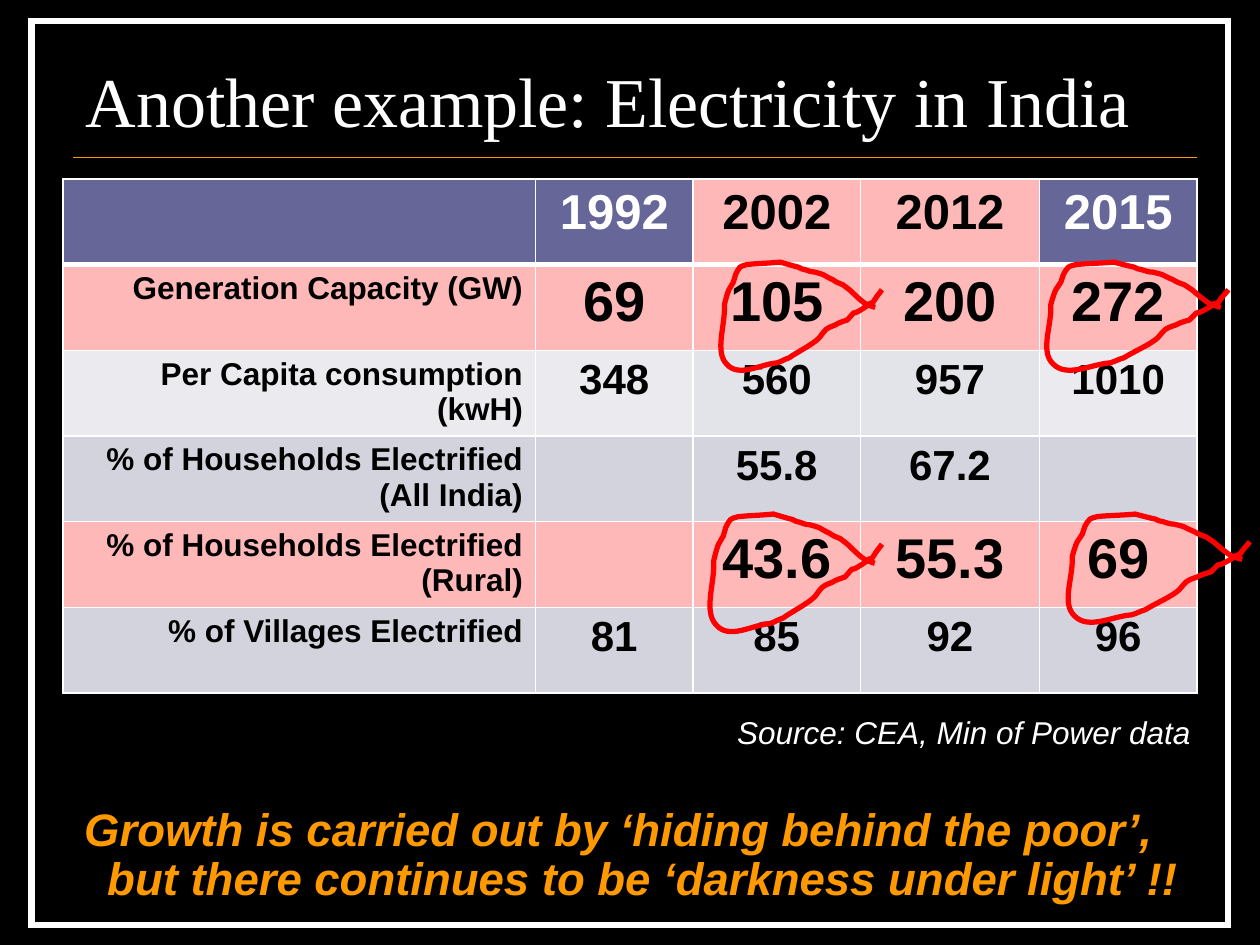
import pptx
import pptx.util
import pptx.dml.color
import pptx.enum.shapes
import pptx.enum.text
import pptx.oxml
import pptx.oxml.ns
from pptx.util import Inches

ALIGN = pptx.enum.text.PP_ALIGN
ANCHOR = pptx.enum.text.MSO_ANCHOR
NS = pptx.oxml.ns.nsdecls("a")

# Content
TITLE = "Another example: Electricity in India"
SOURCE = "Source: CEA, Min of Power data"
CONCLUSION = ("Growth is carried out by ‘hiding behind the poor’, "
              "but there continues to be ‘darkness under light’ !!")

WHITE, BLACK, ORANGE, RED = "FFFFFF", "000000", "FF9900", "FF0000"
PINK, SLATE = "FFB8B8", "666699"
LIGHT, LIGHT_MID = "EAEAEF", "E3E3EA"
DARK, DARK_MID = "D3D3DE", "D4D4DF"

# Each row: texts, value size, fill of outer columns, fill of 2002 and 2012
ROWS = [
    (["", "1992", "2002", "2012", "2015"], 28, SLATE, PINK),
    (["Generation Capacity (GW)", "69", "105", "200", "272"], 32, PINK, PINK),
    (["Per Capita consumption (kwH)", "348", "560", "957", "1010"],
     24, LIGHT, LIGHT_MID),
    (["% of Households Electrified (All India)", "", "55.8", "67.2", ""],
     24, DARK, DARK_MID),
    (["% of Households Electrified (Rural)", "", "43.6", "55.3", "69"],
     32, PINK, PINK),
    (["% of Villages Electrified", "81", "85", "92", "96"], 24, DARK, DARK_MID),
]
COLUMN_WIDTHS = [3.75, 1.25, 1.33, 1.42, 1.25]
ROW_HEIGHT = 0.68
MIDDLE_COLUMNS = (2, 3)

# Hand-drawn loop: start, then cubic curves (two controls and an end),
# in hundredths of an inch within a box of LOOP_SIZE
LOOP_SIZE = (150, 92)
LOOP_START = (144, 36)
LOOP_CURVES = [
    (142, 35, 139, 35, 137, 34), (131, 31, 126, 26, 121, 22),
    (119, 21, 117, 19, 115, 18), (112, 17, 109, 16, 106, 14),
    (94, 9, 102, 11, 90, 8), (87, 8, 84, 7, 81, 6),
    (79, 6, 77, 5, 75, 4), (70, 3, 59, 0, 59, 0),
    (49, 1, 39, 1, 29, 2), (26, 3, 24, 3, 23, 4),
    (21, 6, 20, 8, 19, 10), (18, 12, 18, 14, 17, 16),
    (16, 18, 14, 20, 13, 22), (11, 26, 9, 34, 9, 34),
    (10, 50, 0, 71, 11, 81), (22, 92, 41, 81, 56, 80),
    (60, 79, 63, 77, 67, 76), (73, 72, 89, 65, 94, 60),
    (100, 53, 99, 53, 108, 50), (111, 48, 119, 46, 119, 46),
    (130, 35, 120, 44, 131, 38), (146, 30, 128, 37, 142, 32),
    (147, 25, 145, 28, 150, 22),
]
# Left, top, width, height of each loop
LOOPS = [(8.25, 2.08, 1.5, 0.92), (8.42, 4.08, 1.5, 0.92),
         (5.58, 4.08, 1.42, 1), (5.67, 2.08, 1.33, 0.92)]


def rgb(value):
    return pptx.dml.color.RGBColor.from_string(value)


def write(frame, text, size, color, font="Arial", bold=False, italic=False,
          align=ALIGN.CENTER, spacing=0.8, before=0.2):
    paragraph = frame.paragraphs[0]
    paragraph.alignment = align
    paragraph.line_spacing = spacing
    paragraph.space_before = pptx.util.Pt(size * before)
    run = paragraph.add_run()
    run.text = text
    run.font.name = font
    run.font.size = pptx.util.Pt(size)
    run.font.bold = bold
    run.font.italic = italic
    run.font.color.rgb = rgb(color)
    return paragraph


def stroke(line, color, width):
    line.color.rgb = rgb(color)
    line.width = pptx.util.Pt(width)


def cell_borders(cell, **widths):
    properties = cell._tc.get_or_add_tcPr()
    for side, width in widths.items():
        properties.append(pptx.oxml.parse_xml(
            f'<a:ln{side} {NS} w="{pptx.util.Pt(width)}">'
            f'<a:solidFill><a:srgbClr val="{WHITE}"/></a:solidFill></a:ln{side}>'))


def draw_loop(shapes, left, top, width, height):
    points = [LOOP_START] + [curve[i:i + 2] for curve in LOOP_CURVES
                             for i in (0, 2, 4)]
    start, *rest = [(Inches(left + x / LOOP_SIZE[0] * width),
                     Inches(top + y / LOOP_SIZE[1] * height))
                    for x, y in points]
    builder = shapes.build_freeform(*start)
    builder.add_line_segments(rest, close=False)
    loop = builder.convert_to_shape()
    loop.shadow.inherit = False
    loop.fill.background()
    stroke(loop.line, RED, 3)

    # Every three straight segments become one cubic curve
    segments = loop._element.xpath(".//a:path/a:lnTo")
    for i in range(0, len(segments), 3):
        curve = pptx.oxml.parse_xml(f"<a:cubicBezTo {NS}/>")
        segments[i].addprevious(curve)
        for segment in segments[i:i + 3]:
            curve.append(segment[0])
            segment.getparent().remove(segment)


def main():
    deck = pptx.Presentation()
    deck.slide_width, deck.slide_height = Inches(10), Inches(7.5)
    slide = deck.slides.add_slide(deck.slide_layouts[5])
    slide.background.fill.solid()
    slide.background.fill.fore_color.rgb = rgb(BLACK)
    shapes = slide.shapes

    # Frame with square corners, and rule
    border = shapes.add_shape(pptx.enum.shapes.MSO_SHAPE.RECTANGLE,
                              Inches(0.25), Inches(0.17), Inches(9.5), Inches(7.17))
    border.shadow.inherit = False
    border.fill.solid()
    border.fill.fore_color.rgb = rgb(BLACK)
    stroke(border.line, WHITE, 3.5)
    border.line._get_or_add_ln().append(
        pptx.oxml.parse_xml(f'<a:miter {NS} lim="800000"/>'))
    rule = shapes.add_connector(pptx.enum.shapes.MSO_CONNECTOR.STRAIGHT,
                                Inches(0.58), Inches(1.25), Inches(9.5), Inches(1.25))
    for style in rule._element.xpath("./p:style"):
        rule._element.remove(style)
    stroke(rule.line, ORANGE, 1)
    rule._element.spPr.append(pptx.oxml.parse_xml(f"<a:effectLst {NS}/>"))

    # Title, brought in front of the frame
    title = shapes.title
    title.left, title.top = Inches(0.58), Inches(0.17)
    title.width, title.height = Inches(8.92), Inches(1)
    title.text_frame.vertical_anchor = ANCHOR.BOTTOM
    title.text_frame.auto_size = pptx.enum.text.MSO_AUTO_SIZE.NONE
    write(title.text_frame, TITLE, 40, WHITE, font="Times New Roman",
          align=ALIGN.LEFT, before=0)
    rule._element.addnext(title._element)

    # Table
    table = shapes.add_table(
        len(ROWS), len(COLUMN_WIDTHS), Inches(0.5), Inches(1.42),
        Inches(sum(COLUMN_WIDTHS)), Inches(ROW_HEIGHT * len(ROWS))).table
    for column, width in zip(table.columns, COLUMN_WIDTHS):
        column.width = Inches(width)
    for r, (texts, value_size, outer, middle) in enumerate(ROWS):
        table.rows[r].height = Inches(ROW_HEIGHT)
        for c, text in enumerate(texts):
            cell = table.cell(r, c)
            cell_borders(cell, L=1, R=1, T=3 if r == 1 else 1, B=3 if r == 0 else 1)
            fill = middle if c in MIDDLE_COLUMNS else outer
            cell.fill.solid()
            cell.fill.fore_color.rgb = rgb(fill)
            if text:
                write(cell.text_frame, text, 18 if c == 0 else value_size,
                      WHITE if fill == SLATE else BLACK, bold=True, spacing=1.0,
                      align=ALIGN.RIGHT if c == 0 else ALIGN.CENTER)

    # Source and conclusion
    source = shapes.add_textbox(Inches(5.73), Inches(5.67), Inches(3.84), Inches(0.34))
    source.text_frame.word_wrap = False
    write(source.text_frame, SOURCE, 18, WHITE, italic=True)
    conclusion = shapes.add_textbox(Inches(0.33), Inches(6.36),
                                    Inches(9.17), Inches(0.89))
    conclusion.text_frame.word_wrap = True
    paragraph = write(conclusion.text_frame, CONCLUSION, 26, ORANGE,
                      bold=True, italic=True, spacing=0.9)
    hanging = paragraph._p.get_or_add_pPr()
    hanging.set("marL", str(Inches(0.38)))
    hanging.set("indent", str(-Inches(0.38)))

    # Red loops around key values
    for box in LOOPS:
        draw_loop(shapes, *box)

    deck.save("out.pptx")


if __name__ == "__main__":
    main()
